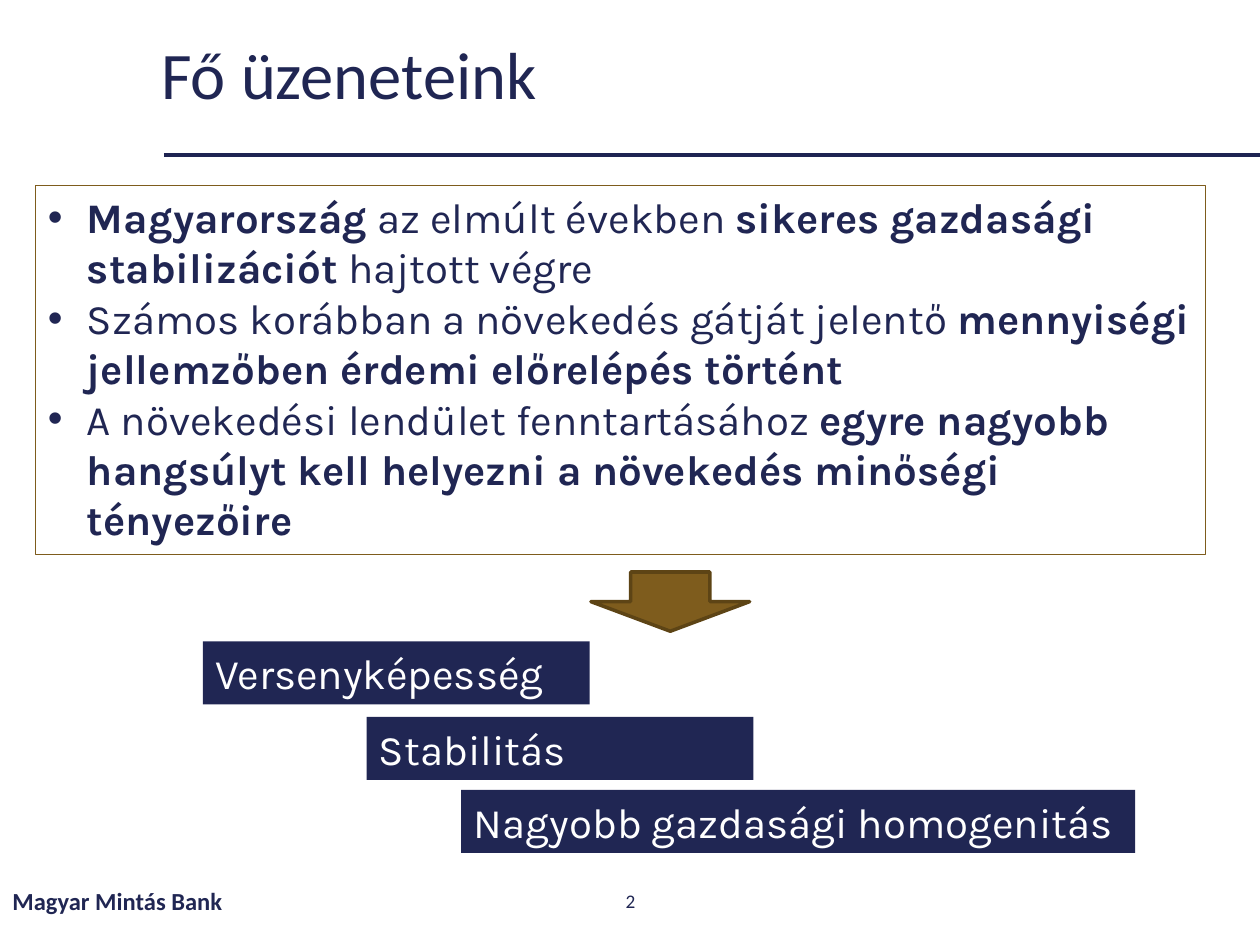
from lxml import etree
from pptx import Presentation
from pptx import util as u
from pptx.dml.color import RGBColor
from pptx.enum import shapes, text
from pptx.oxml import ns

NAVY = RGBColor(0x20, 0x26, 0x53)
RULE_NAVY = RGBColor(0x1E, 0x24, 0x52)
BRONZE = RGBColor(0x7E, 0x5C, 0x1D)
DARK_BRONZE = RGBColor(0x5D, 0x44, 0x15)
WHITE = RGBColor(0xFF, 0xFF, 0xFF)
HEADING_FONT, BODY_FONT = "Calibri", "Karla"

MESSAGES = [
    [("Magyarország", True), (" az elmúlt években ", False),
     ("sikeres gazdasági stabilizációt", True), (" hajtott végre", False)],
    [("Számos korábban a növekedés gátját jelentő ", False),
     ("mennyiségi jellemzőben érdemi előrelépés történt", True)],
    [("A növekedési lendület fenntartásához ", False),
     ("egyre nagyobb hangsúlyt kell helyezni a növekedés minőségi tényezőire", True)],
]
GOALS = [
    ("Versenyképesség", (1.61, 5.09, 3.07, 0.5)),
    ("Stabilitás", (2.91, 5.69, 3.07, 0.5)),
    ("Nagyobb gazdasági homogenitás", (3.66, 6.27, 5.35, 0.5)),
]


def inches(box):
    return [u.Inches(length) for length in box]


def place(part, box):
    part.left, part.top, part.width, part.height = inches(box)


def write(paragraph, words, font=BODY_FONT, size=24, color=NAVY, bold=False,
          align=text.PP_ALIGN.LEFT, spacing=1.0):
    paragraph.alignment = align
    paragraph.line_spacing = spacing
    paragraph.space_before = u.Pt(0)
    run = paragraph.add_run()
    run.text = words
    run.font.name, run.font.size, run.font.bold = font, u.Pt(size), bold
    run.font.color.rgb = color


def set_frame(frame, anchor):
    frame.word_wrap = True
    frame.auto_size = text.MSO_AUTO_SIZE.NONE
    frame.vertical_anchor = anchor


def add_bullet(paragraph, indent):
    properties = paragraph._p.get_or_add_pPr()
    properties.set("marL", str(indent))
    properties.set("indent", str(-indent))
    etree.SubElement(properties, ns.qn("a:buFont")).set("typeface", "Arial")
    etree.SubElement(properties, ns.qn("a:buChar")).set("char", "•")


def add_heading(slide, box):
    title = slide.shapes.title
    place(title, box)
    set_frame(title.text_frame, text.MSO_ANCHOR.MIDDLE)
    write(title.text_frame.paragraphs[0], "Fő üzeneteink",
          font=HEADING_FONT, size=38, spacing=0.9)


def add_rule(slide, left, top, right):
    rule = slide.shapes.add_connector(
        shapes.MSO_CONNECTOR.STRAIGHT, *inches((left, top, right, top)))
    rule.line.color.rgb = RULE_NAVY
    rule.line.width = u.Pt(2.25)
    etree.SubElement(rule._element.spPr, ns.qn("a:effectLst"))


def add_messages(slide, box):
    body = slide.placeholders[1]
    place(body, box)
    body.line.color.rgb = BRONZE
    body.line.width = u.Pt(0.75)
    frame = body.text_frame
    set_frame(frame, text.MSO_ANCHOR.TOP)
    for index, message in enumerate(MESSAGES):
        paragraph = frame.add_paragraph() if index else frame.paragraphs[0]
        for words, bold in message:
            write(paragraph, words, bold=bold)
        add_bullet(paragraph, u.Inches(0.31))


def add_filled(slide, kind, box, fill):
    part = slide.shapes.add_shape(kind, *inches(box))
    part.shadow.inherit = False
    part.fill.solid()
    part.fill.fore_color.rgb = fill
    part.line.fill.background()
    return part


def add_arrow(slide, box):
    arrow = add_filled(slide, shapes.MSO_SHAPE.DOWN_ARROW, box, BRONZE)
    arrow.line.color.rgb = DARK_BRONZE
    arrow.line.width = u.Pt(2)


def add_goals(slide):
    for words, box in GOALS:
        goal = add_filled(slide, shapes.MSO_SHAPE.RECTANGLE, box, NAVY)
        set_frame(goal.text_frame, text.MSO_ANCHOR.TOP)
        write(goal.text_frame.paragraphs[0], words, color=WHITE)


def add_footer(slide, top, height):
    entries = [
        ("Magyar Mintás Bank", 0, 3.38, dict(size=14, bold=True)),
        ("2", 3.88, 2.25, dict(size=11, align=text.PP_ALIGN.CENTER)),
    ]
    for words, left, width, look in entries:
        entry = slide.shapes.add_textbox(*inches((left, top, width, height)))
        set_frame(entry.text_frame, text.MSO_ANCHOR.MIDDLE)
        write(entry.text_frame.paragraphs[0], words, font=HEADING_FONT, **look)


def main():
    deck = Presentation()
    deck.slide_width, deck.slide_height = inches((10, 7.5))
    slide = deck.slides.add_slide(deck.slide_layouts[1])
    add_rule(slide, 1.3, 1.23, 10)
    add_heading(slide, (1.18, 0.2, 8.19, 0.83))
    add_footer(slide, 6.95, 0.4)
    add_goals(slide)
    add_messages(slide, (0.28, 1.47, 9.29, 2.93))
    add_arrow(slide, (4.69, 4.54, 1.26, 0.47))
    deck.save("out.pptx")


if __name__ == "__main__":
    main()
